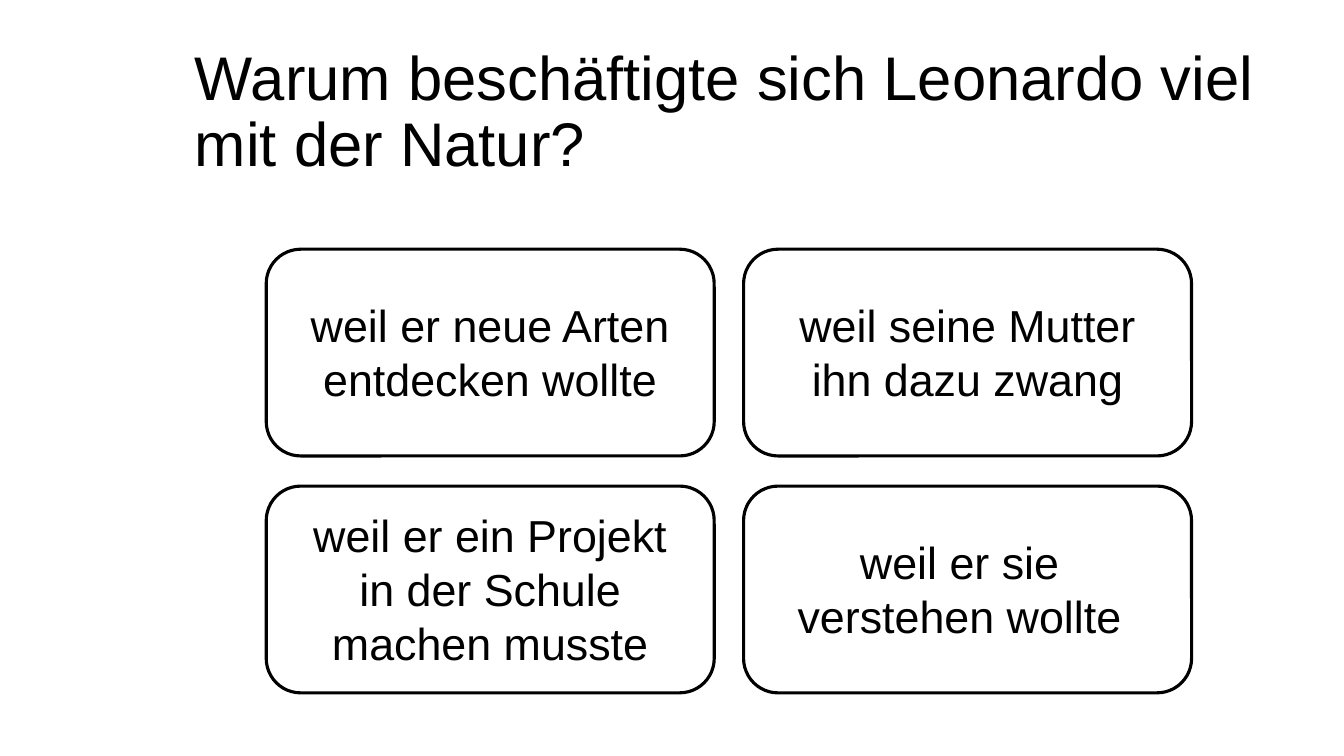
import pptx
import pptx.dml.color
import pptx.enum.shapes
import pptx.enum.text
import pptx.util
from pptx.util import Cm

BLACK = pptx.dml.color.RGBColor(0, 0, 0)
FONT = "Arial"

# Card grid
GRID_LEFT, GRID_TOP = Cm(6.71), Cm(6.28)
CARD_WIDTH, CARD_HEIGHT = Cm(11.29), Cm(5.21)
STEP_X, STEP_Y = Cm(12.03), Cm(5.97)
ANSWER_WIDTH = Cm(9.88)

# Answer, column, row, text height, sideways shift
ANSWERS = [
    ("weil er neue Arten entdecken wollte", 0, 0, Cm(3), Cm(0)),
    ("weil er sie verstehen wollte", 1, 1, Cm(3), Cm(-0.2)),
    ("weil er ein Projekt in der Schule machen musste", 0, 1, Cm(4.37), Cm(0)),
    ("weil seine Mutter ihn dazu zwang", 1, 0, Cm(3), Cm(0)),
]


def format_paragraph(para, size, alignment):
    para.alignment = alignment
    para.font.name = FONT
    para.font.size = pptx.util.Pt(size)
    para.font.color.rgb = BLACK


def set_title(page, text):
    title = page.shapes.title
    title.left, title.top = Cm(4.66), Cm(1.02)
    title.width, title.height = Cm(29.21), Cm(3.68)
    frame = title.text_frame
    frame.text = text
    frame.word_wrap = True
    frame.auto_size = pptx.enum.text.MSO_AUTO_SIZE.NONE
    frame.vertical_anchor = pptx.enum.text.MSO_ANCHOR.MIDDLE
    para = frame.paragraphs[0]
    para.line_spacing = 0.9
    format_paragraph(para, 44, pptx.enum.text.PP_ALIGN.LEFT)


def add_card(page, column, row):
    card = page.shapes.add_shape(
        pptx.enum.shapes.MSO_SHAPE.ROUNDED_RECTANGLE,
        GRID_LEFT + column * STEP_X, GRID_TOP + row * STEP_Y,
        CARD_WIDTH, CARD_HEIGHT)
    card.shadow.inherit = False
    card.fill.background()
    card.line.color.rgb = BLACK
    card.line.width = pptx.util.Pt(2.25)


def add_answer(page, text, column, row, height, shift):
    # Centred on its card
    left = GRID_LEFT + column * STEP_X + (CARD_WIDTH - ANSWER_WIDTH) // 2 + shift
    top = GRID_TOP + row * STEP_Y + (CARD_HEIGHT - height) // 2
    box = page.shapes.add_textbox(left, top, ANSWER_WIDTH, height)
    frame = box.text_frame
    frame.text = text
    frame.word_wrap = True
    frame.auto_size = pptx.enum.text.MSO_AUTO_SIZE.SHAPE_TO_FIT_TEXT
    format_paragraph(frame.paragraphs[0], 32, pptx.enum.text.PP_ALIGN.CENTER)


def main():
    deck = pptx.Presentation()
    deck.slide_width, deck.slide_height = Cm(33.87), Cm(19.05)
    page = deck.slides.add_slide(deck.slide_layouts.get_by_name("Title Only"))

    # Question
    set_title(page, "Warum beschäftigte sich Leonardo viel mit der Natur?")

    # Cards, then the answers on top
    for row in range(2):
        for column in range(2):
            add_card(page, column, row)
    for answer in ANSWERS:
        add_answer(page, *answer)

    deck.save("out.pptx")


if __name__ == "__main__":
    main()
